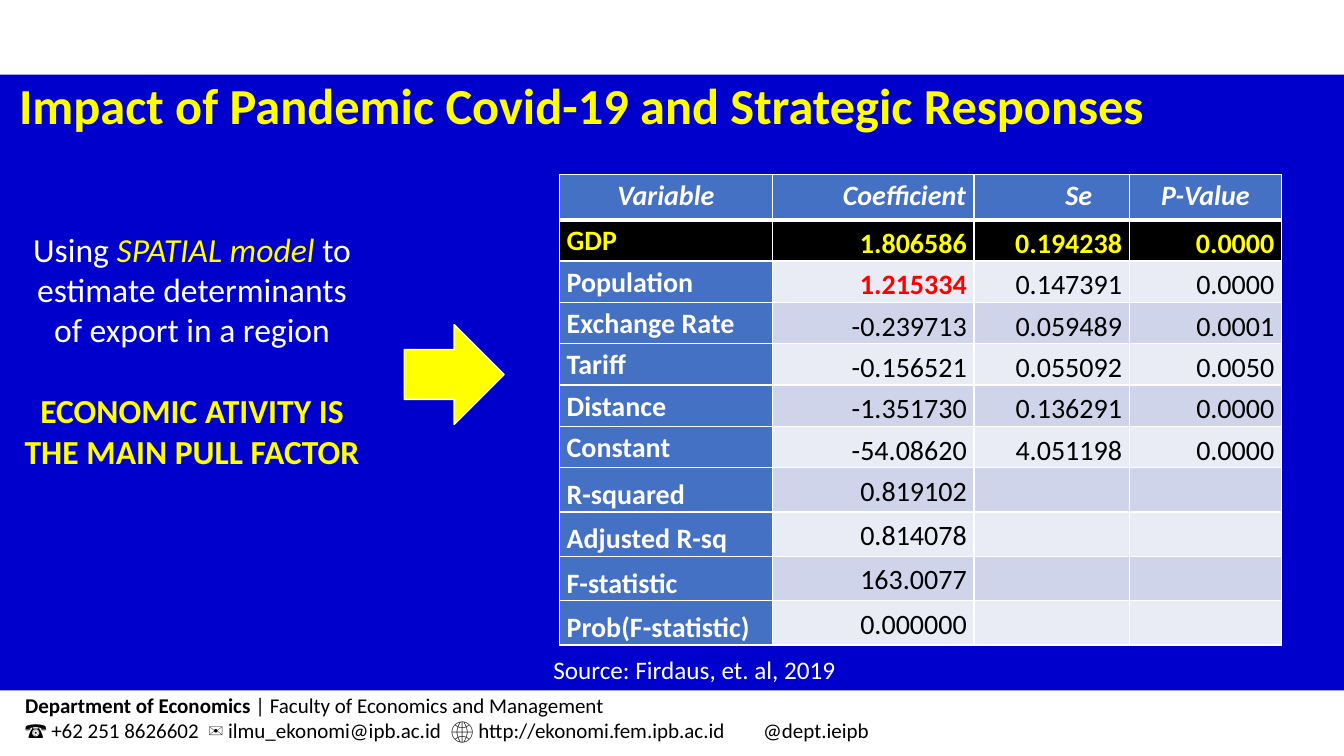
from lxml.etree import SubElement
from pptx import Presentation
from pptx.dml.color import RGBColor as RGB
from pptx.enum.shapes import MSO_SHAPE as SHAPE
from pptx.enum.text import PP_ALIGN as AL
from pptx.oxml.ns import qn
from pptx.util import Pt

PX = 9144  # 100 px to the inch
C = {"blue": "0000CC", "yellow": "FFFF00", "white": "FFFFFF", "black": "000000",
     "red": "FF0000", "head": "4471C4", "light": "E9EBF5", "dark": "CFD4EA"}


def put(p, text, size=20, color="white", bold=False, italic=False):
    r = p.add_run()
    r.text = text
    f = r.font
    f.name, f.size, f.bold, f.italic = "Calibri", Pt(size), bold, italic
    f.color.rgb = RGB.from_string(C[color])


def box(x, y, w, h, wrap=True):
    tf = s.shapes.add_textbox(x * PX, y * PX, w * PX, h * PX).text_frame
    tf.word_wrap = wrap
    return tf


prs = Presentation()
prs.slide_width, prs.slide_height = 1333 * PX, 750 * PX
s = prs.slides.add_slide(prs.slide_layouts[6])

# Footer
tf = box(15, 682, 978, 61)
p = tf.paragraphs[0]
put(p, "Department of Economics ", 15, "black", bold=True)
put(p, "| Faculty of Economics and Management", 15, "black")
p = tf.add_paragraph()
tabs = SubElement(p._p.get_or_add_pPr(), qn("a:tabLst"))
SubElement(tabs, qn("a:tab"), pos=str(732 * PX), algn="l")
put(p, "☎ +62 251 8626602  ✉ ilmu_ekonomi@ipb.ac.id  ", 15, "black")
put(p, "🌐 ", 15, "black", bold=True)
put(p, "http://ekonomi.fem.ipb.ac.id\t@dept.ieipb", 15, "black")

# Blue panel and arrow
for kind, x, y, w, h, fill, line in [
        (SHAPE.RECTANGLE, 0, 74, 1333, 611, "blue", None),
        (SHAPE.RIGHT_ARROW, 401, 322, 99, 99, "yellow", "white")]:
    sp = s.shapes.add_shape(kind, x * PX, y * PX, w * PX, h * PX)
    sp.shadow.inherit = False
    sp.fill.solid()
    sp.fill.fore_color.rgb = RGB.from_string(C[fill])
    if line:
        sp.line.color.rgb = RGB.from_string(C[line])
        sp.line.width = Pt(1)
    else:
        sp.line.fill.background()

# Title
p = box(9, 69, 1289, 71).paragraphs[0]
put(p, "Impact of Pandemic Covid-19 and Strategic Responses", 36, "yellow", bold=True)

# Regression table
rows = [
    ("Variable", "Coefficient", "Se", "P-Value"),
    ("GDP", "1.806586", "0.194238", "0.0000"),
    ("Population", "1.215334", "0.147391", "0.0000"),
    ("Exchange Rate", "-0.239713", "0.059489", "0.0001"),
    ("Tariff", "-0.156521", "0.055092", "0.0050"),
    ("Distance", "-1.351730", "0.136291", "0.0000"),
    ("Constant", "-54.08620", "4.051198", "0.0000"),
    ("R-squared", "0.819102", "", ""),
    ("Adjusted R-sq", "0.814078", "", ""),
    ("F-statistic", "163.0077", "", ""),
    ("Prob(F-statistic)", "0.000000", "", ""),
]
widths = [211, 200, 154, 151]
heights = [45] + [41] * 6 + [44] * 4
head_indents = [0, 62, 54, 0]
tbl = s.shapes.add_table(len(rows), len(widths), 555 * PX, 173 * PX,
                         sum(widths) * PX, sum(heights) * PX).table
for col, w in zip(tbl.columns, widths):
    col.width = w * PX
for i, row in enumerate(rows):
    tbl.rows[i].height = heights[i] * PX
    for j, text in enumerate(row):
        cell = tbl.cell(i, j)
        label = i == 0 or j == 0
        fill, color = "light" if i % 2 == 0 else "dark", "black"
        if i == 1:
            fill, color = "black", "yellow"
        elif label:
            fill, color = "head", "white"
        elif (i, j) == (2, 1):
            color = "red"

        # Text
        cell.margin_top = (10 if label else 7) * PX
        cell.margin_bottom = 0
        cell.margin_left = (head_indents[j] if i == 0 else 7) * PX
        cell.margin_right = (0 if label else 7) * PX
        p = cell.text_frame.paragraphs[0]
        p.alignment = AL.CENTER if i == 0 else AL.LEFT if j == 0 else AL.RIGHT
        if label and i < 7:
            p.line_spacing = Pt(20.4)
        if text:
            put(p, text, 20, color, bold=color != "black", italic=i == 0)

        # Borders, then fill
        for side in "LRTB":
            thick = (i, side) in ((0, "B"), (1, "T"))
            ln = SubElement(cell._tc.get_or_add_tcPr(), qn("a:ln" + side),
                            w=str(Pt(3 if thick else 1)))
            solid = SubElement(ln, qn("a:solidFill"))
            SubElement(solid, qn("a:srgbClr"), val=C["white"])
        cell.fill.solid()
        cell.fill.fore_color.rgb = RGB.from_string(C[fill])

# Finding
tf = box(14, 222, 353, 374)
p = tf.paragraphs[0]
p.alignment = AL.CENTER
put(p, "Using ", 24)
put(p, "SPATIAL model ", 24, "yellow", italic=True)
put(p, "to estimate determinants of export in a region", 24)
p = tf.add_paragraph()
p.alignment = AL.CENTER
p.space_before = Pt(29)
put(p, "ECONOMIC ATIVITY IS THE MAIN PULL FACTOR", 24, "yellow", bold=True)

# Source
p = box(539, 644, 303, 40, wrap=False).paragraphs[0]
put(p, "Source: Firdaus, et. al, 2019", 18)

prs.save("out.pptx")
